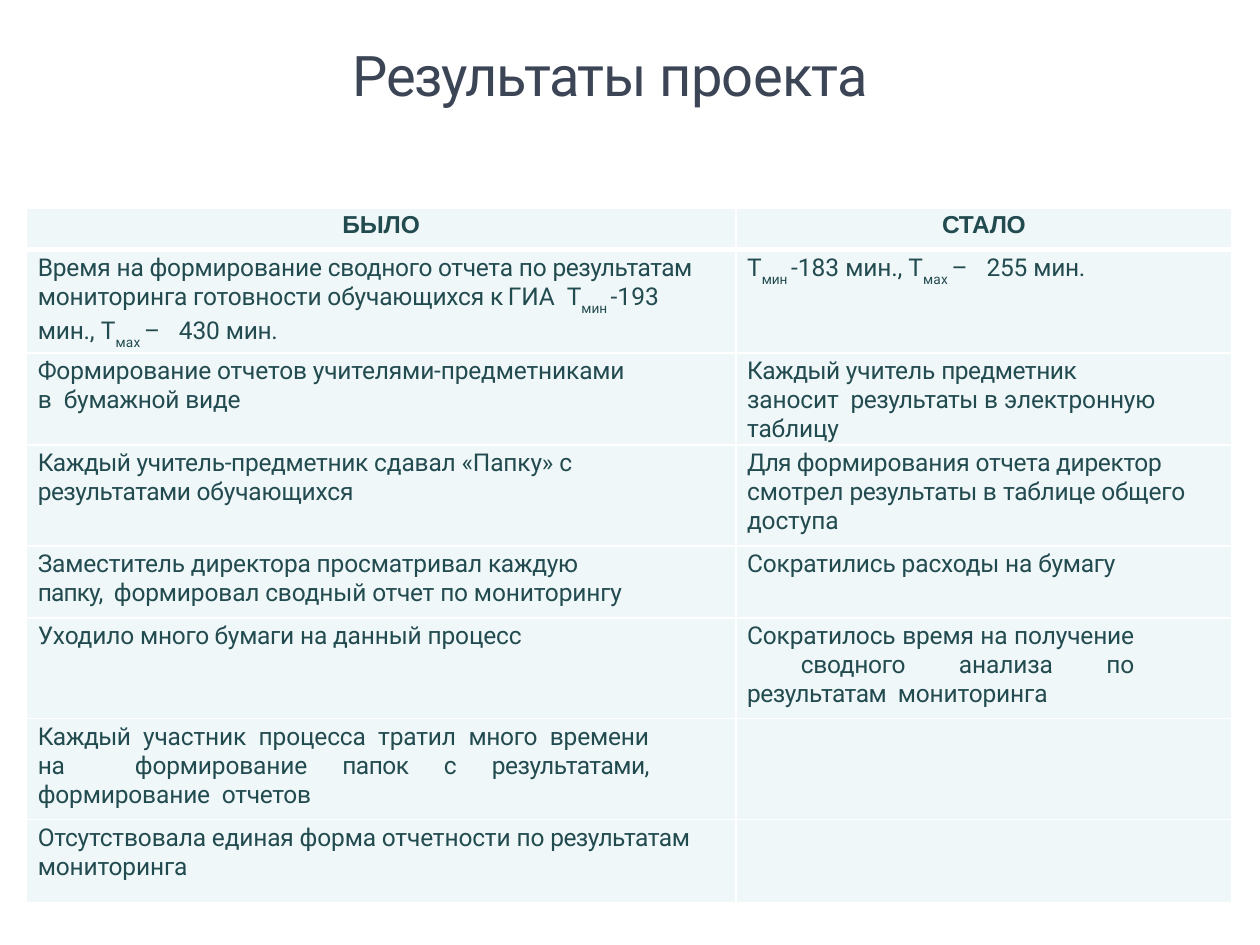
from lxml import etree
from pptx import Presentation
from pptx.dml.color import RGBColor
from pptx.enum import text
from pptx.oxml import ns
from pptx.util import Inches, Pt

TITLE_COLOR, TEXT_COLOR = "3B4555", "224B4F"
CELL_FILL, BORDER = "F0F7F9", "FFFFFF"
LEFT, JUSTIFY = text.PP_ALIGN.LEFT, text.PP_ALIGN.JUSTIFY

COLUMNS = [5.63, 3.94]
ROWS = [0.33, 0.8, 0.57, 0.8, 0.57, 0.8, 0.8, 0.66]
HEADERS = [[("БЫЛО", -0.1)], [("СТАЛО", -0.2)]]


def times(t_min, t_max, before_max):
    """Runs for the shortest and longest time, with subscripts."""
    return [("Т", 0), ("мин ", 0, "sub"), (t_min + " ", 0), *before_max,
            ("мах ", 0.1, "sub"), ("– ", 3.6), (t_max + " ", -0.1), ("мин.", -0.2)]


# Each cell: right margin, alignment, runs of (text, letter spacing)
BODY = [
    [(0.2, LEFT, [("Время на формирование ", -0.1), ("сводного отчета ", -0.2),
                  ("по ", -0.1), ("результатам  ", -0.3),
                  ("мониторинга готовности обучающихся ", -0.1), ("к ", -0.9),
                  ("ГИА  ", -0.1),
                  *times("-193", "430", [("мин., ", -0.1), ("Т", 0.1)])]),
     (0.1, LEFT, times("-183", "255", [("мин.,", -0.1), (" Т", 0.1)]))],
    [(0.85, LEFT, [("Формирование отчетов учителями-предметниками ", -0.1),
                   ("в  ", 0), ("бумажной ", -0.2), ("виде", -0.1)]),
     (0.56, LEFT, [("Каждый ", -0.3), ("учитель ", -0.1), ("предметник ", -0.3),
                   ("заносит  ", -0.1), ("результаты ", -0.3), ("в ", 0),
                   ("электронную таблицу", -0.1)])],
    [(0.6, LEFT, [("Каждый ", -0.3), ("учитель-предметник ", -0.2),
                  ("сдавал «Папку» ", -0.1), ("с  ", 0), ("результатами ", -0.3),
                  ("обучающихся", -0.1)]),
     (0.2, LEFT, [("Для ", -0.5), ("формирования ", -0.1), ("отчета директор ", -0.2),
                  (" смотрел ", -0.1), ("результаты ", -0.3), ("в ", 0),
                  ("таблице ", -0.2), ("общего  доступа", -0.1)])],
    [(0.8, LEFT, [("Заместитель директора просматривал ", -0.1), ("каждую ", -0.2),
                  ("папку,  ", -0.5), ("формировал сводный ", -0.1),
                  ("отчет ", -0.2), ("по мониторингу", -0.1)]),
     (0.1, LEFT, [("Сократились расходы на ", -0.1), ("бумагу", -0.2)])],
    [(0.1, LEFT, [("Уходило ", -0.1), ("много бумаги ", -0.2),
                  ("на данный процесс", -0.1)]),
     (0.78, JUSTIFY, [("Сократилось время на получение  ", -0.1),
                      ("сводного ", -0.2), ("анализа по ", -0.1),
                      ("результатам  ", -0.3), ("мониторинга", -0.1)])],
    [(0.69, JUSTIFY, [("Каждый ", -0.3), ("участник процесса тратил ", -0.1),
                      ("много ", -0.2), ("времени на  формирование ", -0.1),
                      ("папок ", -0.3), ("с ", 0), ("результатами, ", -0.3),
                      ("формирование  ", -0.1), ("отчетов", -0.2)]), None],
    [(0.1, LEFT, [("Отсутствовала единая форма отчетности по ", -0.1),
                  ("результатам  ", -0.3), ("мониторинга", -0.1)]), None],
]


def rgb(value):
    return RGBColor.from_string(value)


def add_runs(p, runs, size, font, color, bold=False):
    for content, spacing, *sub in runs:
        r = p.add_run()
        r.text = content
        r.font.size = Pt(13.5 if sub else size)
        r.font.name = font
        r.font.bold = bold
        r.font.color.rgb = rgb(color)
        props = r.font._element
        props.set("spc", str(round(spacing * 100)))
        if sub:
            props.set("baseline", "-34000")


def add_title(s):
    box = s.shapes.add_textbox(Inches(2.79), Inches(0.31), Inches(4.11), Inches(0.56))
    tf = box.text_frame
    tf.word_wrap = True
    tf.auto_size = text.MSO_AUTO_SIZE.SHAPE_TO_FIT_TEXT
    tf.margin_left = tf.margin_top = Inches(0.01)
    tf.margin_right = tf.margin_bottom = 0
    add_runs(tf.paragraphs[0], [("Результаты ", -0.8), ("проекта", -0.4)],
             32, "Roboto", TITLE_COLOR)


def set_borders(cell, **widths):
    """Draw the four sides; border elements come before the fill."""
    props = cell._tc.get_or_add_tcPr()
    for i, side in enumerate("LRTB"):
        ln = etree.Element(ns.qn(f"a:ln{side}"), w=str(Pt(widths.get(side, 1))))
        fill = etree.SubElement(ln, ns.qn("a:solidFill"))
        etree.SubElement(fill, ns.qn("a:srgbClr"), val=BORDER)
        props.insert(i, ln)


def style_cell(cell, row):
    cell.fill.solid()
    cell.fill.fore_color.rgb = rgb(CELL_FILL)
    cell.margin_left = cell.margin_right = cell.margin_bottom = 0
    cell.margin_top = Inches(0.03)
    # The heading row is parted from the body by a thicker line
    set_borders(cell, **{0: {"B": 3}, 1: {"T": 3}}.get(row, {}))


def add_results_table(s):
    frame = s.shapes.add_table(len(ROWS), len(COLUMNS), Inches(0.21), Inches(1.65),
                               Inches(sum(COLUMNS)), Inches(sum(ROWS)))
    table = frame.table
    table.first_row = table.horz_banding = False
    for column, width in zip(table.columns, COLUMNS):
        column.width = Inches(width)
    for i, (row, height) in enumerate(zip(table.rows, ROWS)):
        row.height = Inches(height)
        for cell in row.cells:
            style_cell(cell, i)

    # Headings
    for col, runs in enumerate(HEADERS):
        p = table.cell(0, col).text_frame.paragraphs[0]
        p.alignment = text.PP_ALIGN.CENTER
        add_runs(p, runs, 14, "Arial", TEXT_COLOR, bold=True)

    # Body
    for i, entries in enumerate(BODY, start=1):
        for col, entry in enumerate(entries):
            if entry is None:
                continue
            margin, alignment, runs = entry
            cell = table.cell(i, col)
            cell.margin_left, cell.margin_right = Inches(0.09), Inches(margin)
            p = cell.text_frame.paragraphs[0]
            p.alignment = alignment
            add_runs(p, runs, 14, "Roboto", TEXT_COLOR)


def main():
    prs = Presentation()
    prs.slide_width, prs.slide_height = Inches(10), Inches(7.5)
    s = prs.slides.add_slide(prs.slide_layouts[6])
    add_title(s)
    add_results_table(s)
    prs.save("out.pptx")


if __name__ == "__main__":
    main()
